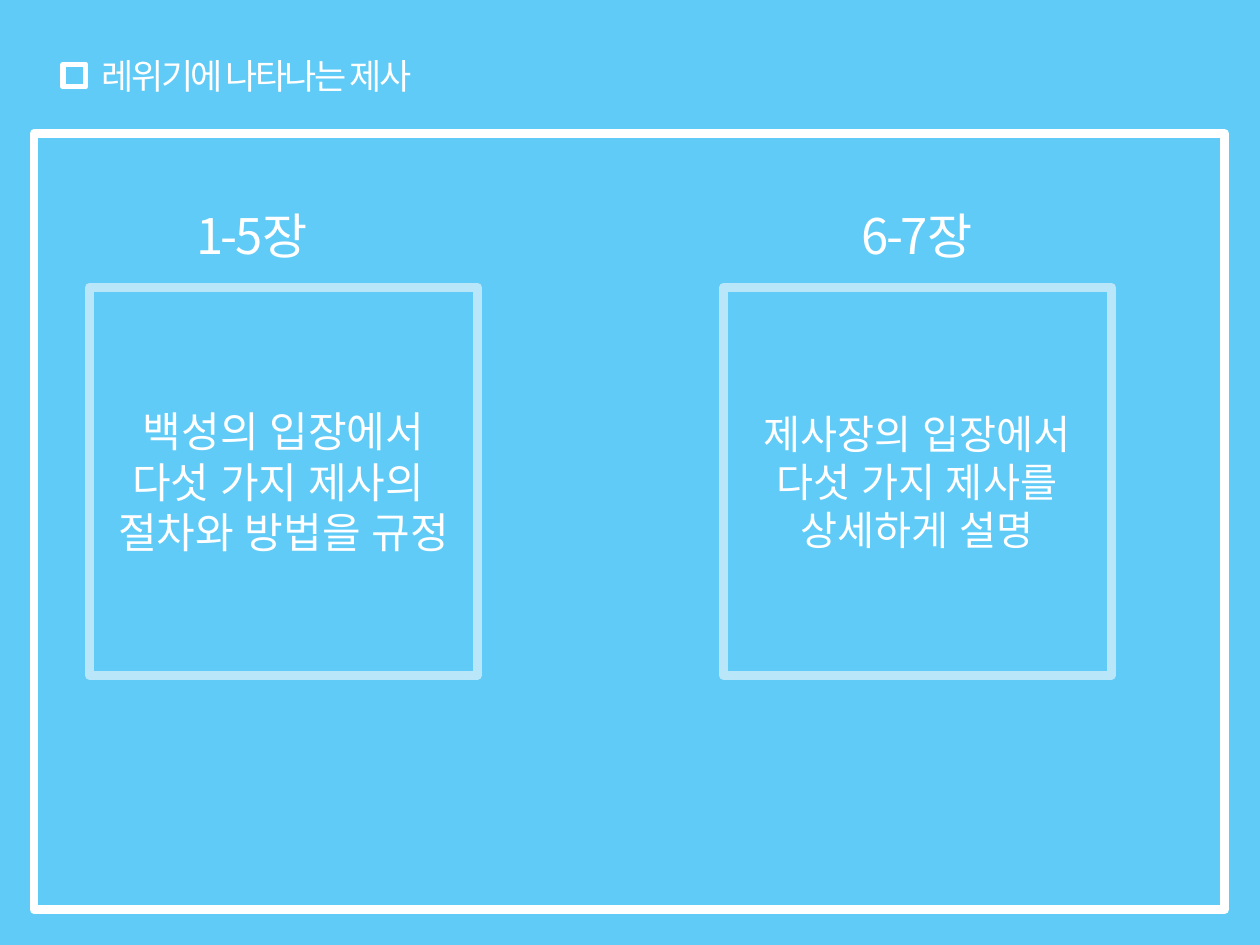
from dataclasses import dataclass
from pptx import Presentation
from pptx.dml.color import RGBColor
from pptx.enum import shapes, text
from pptx.oxml import ns
from pptx.util import Inches, Pt
from lxml import etree


@dataclass(frozen=True)
class Theme:
    sky: RGBColor = RGBColor.from_string("60CBF6")
    white: RGBColor = RGBColor.from_string("FFFFFF")
    pale: RGBColor = RGBColor.from_string("B9E6F8")
    heading_font: str = "Noto Sans CJK KR"
    body_font: str = "Lato"
    title_size: int = 20
    chapter_size: int = 28
    people_size: int = 24
    priest_size: int = 23


theme = Theme()
deck = Presentation()
deck.slide_width, deck.slide_height = Inches(10), Inches(7.5)
slide = deck.slides.add_slide(deck.slide_layouts[6])
slide.background.fill.solid()
slide.background.fill.fore_color.rgb = theme.sky


def add_frame(left, top, width, height, color, weight):
    frame = slide.shapes.add_shape(
        shapes.MSO_SHAPE.RECTANGLE, Inches(left), Inches(top), Inches(width), Inches(height)
    )
    frame.shadow.inherit = False
    frame.fill.background()
    frame.line.color.rgb = color
    frame.line.width = Pt(weight)
    return frame


def add_run(paragraph, words, font, size, spacing=None):
    run = paragraph.add_run()
    run.text = words
    run.font.name = font
    run.font.size = Pt(size)
    run.font.color.rgb = theme.white
    properties = run.font._element
    etree.SubElement(properties, ns.qn("a:ea")).set("typeface", font)
    if spacing is not None:
        properties.set("spc", str(int(spacing * 100)))


add_frame(0.5, 0.51, 0.18, 0.18, theme.white, 3)
add_frame(0.27, 1.06, 9.45, 6.16, theme.white, 5)

headings = [
    ("레위기에 나타나는 제사", 0.71, 0.42, 8.58, 0.74, theme.title_size, 0.9),
    ("1-5장", 1.46, 1.58, 1.6, 0.57, theme.chapter_size, 1.0),
    ("6-7장", 6.74, 1.58, 1.6, 0.57, theme.chapter_size, 1.0),
]
for words, left, top, width, height, size, line_spacing in headings:
    heading = slide.shapes.add_textbox(Inches(left), Inches(top), Inches(width), Inches(height))
    heading.text_frame.word_wrap = True
    paragraph = heading.text_frame.paragraphs[0]
    paragraph.line_spacing = line_spacing
    add_run(paragraph, words, theme.heading_font, size, -1.5)

viewpoints = [
    (0.71, theme.people_size, ["백성의 입장에서", "다섯 가지 제사의 ", "절차와 방법을 규정"]),
    (5.74, theme.priest_size, ["제사장의 입장에서", "다섯 가지 제사를", "상세하게 설명"]),
]
for left, size, lines in viewpoints:
    viewpoint = add_frame(left, 2.28, 3.08, 3.08, theme.pale, 5)
    body = viewpoint.text_frame
    body.word_wrap = True
    body.vertical_anchor = text.MSO_ANCHOR.MIDDLE
    for index, words in enumerate(lines):
        paragraph = body.add_paragraph() if index else body.paragraphs[0]
        paragraph.alignment = text.PP_ALIGN.CENTER
        add_run(paragraph, words, theme.body_font, size)

deck.save("out.pptx")
